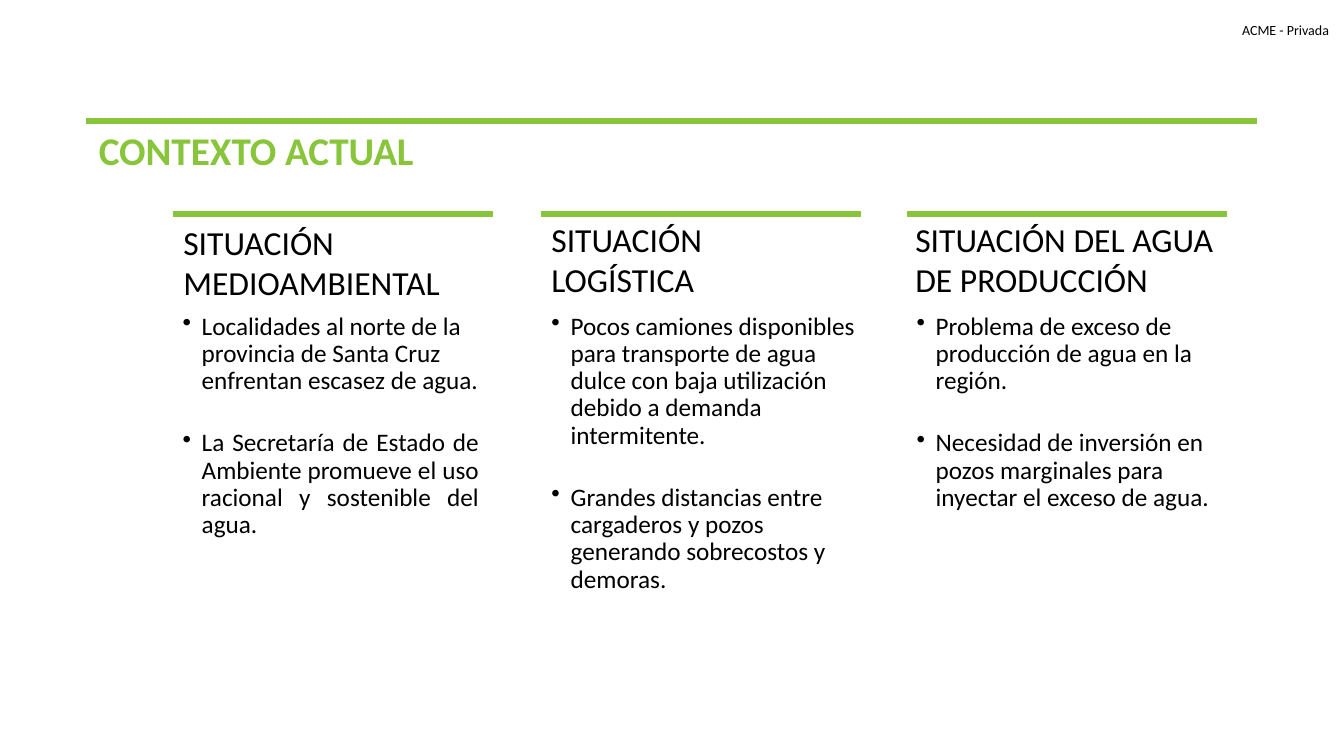
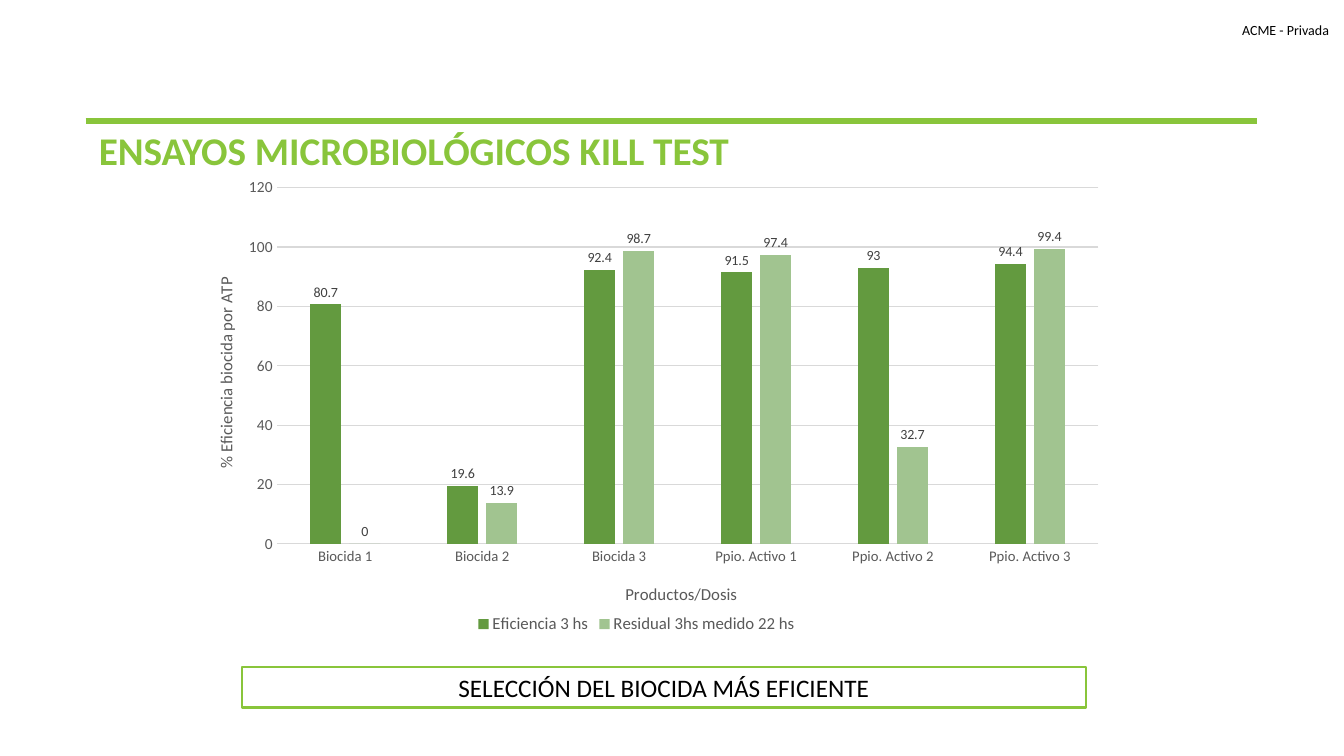
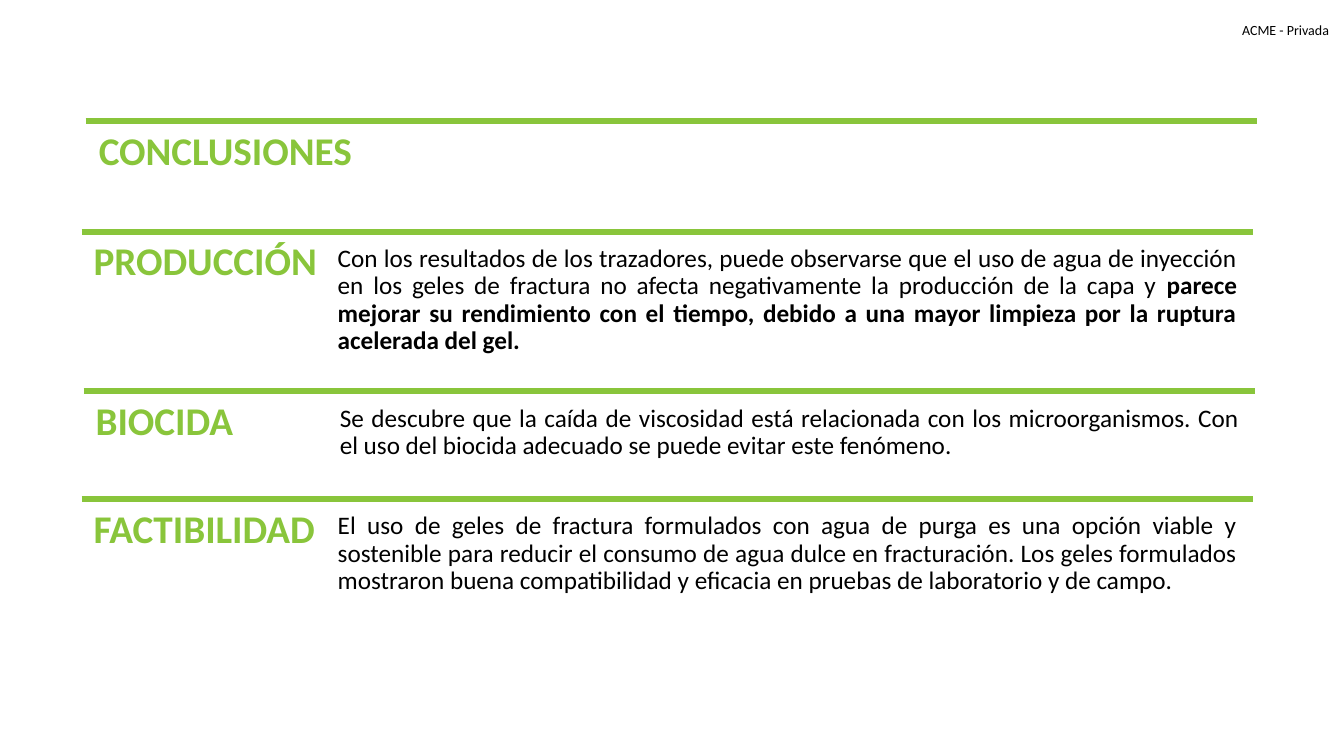
from lxml import etree
from pptx import Presentation
from pptx.chart import data as chart_data
from pptx.dml.color import RGBColor
from pptx.enum import chart as chart_enum, shapes, text
from pptx.oxml import ns
from pptx.util import Inches, Pt

FONT = "Calibri"
GREEN = RGBColor(0x89, 0xC5, 0x3B)
DARK_GREEN = RGBColor(0x63, 0x9A, 0x3F)
PALE_GREEN = RGBColor(0xA1, 0xC4, 0x90)
BLACK = RGBColor(0, 0, 0)
DARK_GRAY = RGBColor(0x40, 0x40, 0x40)
GRAY = RGBColor(0x59, 0x59, 0x59)
LIGHT_GRAY = RGBColor(0xD9, 0xD9, 0xD9)
LEFT, CENTER, JUSTIFY = text.PP_ALIGN.LEFT, text.PP_ALIGN.CENTER, text.PP_ALIGN.JUSTIFY

# Content
LABEL = "ACME - Privada"
RULE_LEFT, RULE_TOP, RULE_WIDTH = 0.85, 1.2, 11.62

# Rule left, heading (left, top, width, text), body (left, width), bullets with alignment
COLUMNS = [
    (1.72, (1.72, 2.15, 2.77, "SITUACIÓN MEDIOAMBIENTAL"), (1.72, 3.15), [
        ("Localidades al norte de la provincia de Santa Cruz enfrentan escasez de agua.", LEFT),
        ("La Secretaría de Estado de Ambiente promueve el uso racional y sostenible del agua.",
         JUSTIFY)]),
    (5.37, (5.37, 2.12, 2.77, "SITUACIÓN LOGÍSTICA"), (5.38, 3.24), [
        ("Pocos camiones disponibles para transporte de agua dulce con baja utilización "
         "debido a demanda intermitente.", LEFT),
        ("Grandes distancias entre cargaderos y pozos generando sobrecostos y demoras.", LEFT)]),
    (9, (8.98, 2.12, 3.43, "SITUACIÓN DEL AGUA DE PRODUCCIÓN"), (9, 3.15), [
        ("Problema de exceso de producción de agua en la región.", LEFT),
        ("Necesidad de inversión en pozos marginales para inyectar el exceso de agua.", LEFT)]),
]

PRODUCTS = ["Biocida 1", "Biocida 2", "Biocida 3",
            "Ppio. Activo 1", "Ppio. Activo 2", "Ppio. Activo 3"]
SERIES = [
    ("Eficiencia 3 hs", (80.7, 19.6, 92.4, 91.5, 93, 94.4), DARK_GREEN),
    ("Residual 3hs medido 22 hs", (0, 13.9, 98.7, 97.4, 32.7, 99.4), PALE_GREEN),
]

# Rule left, rule top, label, body runs (text, bold)
CONCLUSIONS = [
    (0.81, 2.3, "PRODUCCIÓN", [
        ("Con los resultados de los trazadores, puede observarse que el uso de agua de "
         "inyección en los geles de fractura no afecta negativamente la producción de la "
         "capa y ", False),
        ("parece mejorar su rendimiento con el tiempo, debido a una mayor limpieza por la "
         "ruptura acelerada del gel.", True)]),
    (0.83, 3.88, "BIOCIDA", [
        ("Se descubre que la caída de viscosidad está relacionada con los microorganismos. "
         "Con el uso del biocida adecuado se puede evitar este fenómeno.", False)]),
    (0.81, 4.95, "FACTIBILIDAD", [
        ("El uso de geles de fractura formulados con agua de purga es una opción viable y "
         "sostenible para reducir el consumo de agua dulce en fracturación. Los geles "
         "formulados mostraron buena compatibilidad y eficacia en pruebas de laboratorio y "
         "de campo.", False)]),
]


# Shared helpers
def style_font(font, size, color, bold=False):
    font.name, font.size, font.bold = FONT, Pt(size), bold
    font.color.rgb = color


def add_run(paragraph, words, size, color=BLACK, bold=False):
    run = paragraph.add_run()
    run.text = words
    style_font(run.font, size, color, bold)


def prepare_frame(shape, insets=(0.1, 0.05, 0.1, 0.05)):
    frame = shape.text_frame
    frame.word_wrap = True
    frame.auto_size = text.MSO_AUTO_SIZE.NONE
    frame.vertical_anchor = text.MSO_ANCHOR.TOP
    (frame.margin_left, frame.margin_top,
     frame.margin_right, frame.margin_bottom) = map(Inches, insets)
    return frame


def add_box(slide, left, top, width, height, **options):
    box = slide.shapes.add_textbox(*map(Inches, (left, top, width, height)))
    return prepare_frame(box, **options)


def add_rule(slide, left, top, width):
    rule = slide.shapes.add_connector(
        shapes.MSO_CONNECTOR.STRAIGHT,
        Inches(left), Inches(top), Inches(left + width), Inches(top))
    rule.line.color.rgb = GREEN
    rule.line.width = Pt(4.5)
    etree.SubElement(rule._element.spPr, ns.qn("a:effectLst"))


def add_bullet(paragraph):
    properties = paragraph._p.get_or_add_pPr()
    properties.set("marL", str(Inches(0.19)))
    properties.set("indent", str(-Inches(0.19)))
    etree.SubElement(properties, ns.qn("a:buChar")).set("char", "•")


def start_slide(presentation, title):
    """Title-only slide with the privacy label, the top rule and the title."""
    slide = presentation.slides.add_slide(presentation.slide_layouts[5])
    label = add_box(slide, 12.32, 0.21, 0.9, 0.17, insets=(0, 0, 0, 0))
    label.word_wrap = False
    add_run(label.paragraphs[0], LABEL, 10)
    holder = slide.shapes.title
    holder.left, holder.top = Inches(RULE_LEFT + 0.03), Inches(RULE_TOP)
    holder.width, holder.height = Inches(11.41), Inches(0.57)
    paragraph = prepare_frame(holder).paragraphs[0]
    paragraph.alignment = LEFT
    add_run(paragraph, title, 28, GREEN, True)
    add_rule(slide, RULE_LEFT, RULE_TOP, RULE_WIDTH)
    return slide


# Chart helpers
def place_part(chart, query, **fractions):
    """Fix a chart part at fractions of the chart's size."""
    part = chart._chartSpace.xpath(query)[0]
    layout = part.find(ns.qn("c:layout"))
    if layout is None:
        layout = etree.Element(ns.qn("c:layout"))
        part.insert(0, layout)
    manual = etree.SubElement(layout, ns.qn("c:manualLayout"))
    settings = {"xMode": "edge", "yMode": "edge", **fractions}
    if "w" in fractions:
        settings = {"layoutTarget": "inner", **settings}
    for name, value in settings.items():
        etree.SubElement(manual, ns.qn("c:" + name)).set("val", str(value))


def style_axis(axis, title, size):
    axis.major_tick_mark = axis.minor_tick_mark = chart_enum.XL_TICK_MARK.NONE
    style_font(axis.tick_labels.font, size, GRAY)
    add_run(axis.axis_title.text_frame.paragraphs[0], title, 12, GRAY)


def add_efficiency_chart(slide):
    data = chart_data.CategoryChartData()
    data.categories = PRODUCTS
    for name, values, _ in SERIES:
        data.add_series(name, values)
    chart = slide.shapes.add_chart(
        chart_enum.XL_CHART_TYPE.COLUMN_CLUSTERED,
        *map(Inches, (1.82, 1.66, 9.26, 5.05)), data).chart
    style_font(chart.font, 10, BLACK)
    chart.has_title = False

    plot = chart.plots[0]
    plot.vary_by_categories = False
    plot.gap_width, plot.overlap = 219, -27
    for series, (_, _, color) in zip(plot.series, SERIES):
        series.format.fill.solid()
        series.format.fill.fore_color.rgb = color
        labels = series.data_labels
        labels.show_value = True
        labels.position = chart_enum.XL_LABEL_POSITION.OUTSIDE_END
        style_font(labels.font, 10, DARK_GRAY)

    style_axis(chart.category_axis, "Productos/Dosis", 10.5)
    chart.category_axis.format.line.color.rgb = LIGHT_GRAY
    chart.category_axis.format.line.width = Pt(0.75)
    value_axis = chart.value_axis
    style_axis(value_axis, "% Eficiencia biocida por ATP", 11)
    value_axis.minimum_scale, value_axis.maximum_scale, value_axis.major_unit = 0, 120, 20
    value_axis.format.line.fill.background()
    value_axis.major_gridlines.format.line.color.rgb = LIGHT_GRAY
    value_axis.major_gridlines.format.line.width = Pt(0.75)

    chart.has_legend = True
    chart.legend.position = chart_enum.XL_LEGEND_POSITION.BOTTOM
    chart.legend.include_in_layout = False
    style_font(chart.legend.font, 12, GRAY)

    place_part(chart, "//c:plotArea", x=0.1, y=0.04, w=0.88, h=0.7)
    place_part(chart, "//c:catAx/c:title", x=0.47, y=0.81)
    place_part(chart, "//c:valAx/c:title", x=0.03, y=0.21)
    place_part(chart, "//c:legend", x=0.31, y=0.87)


# Slides
def build_context(presentation):
    slide = start_slide(presentation, "CONTEXTO ACTUAL")
    for rule_left, heading, (body_left, body_width), bullets in COLUMNS:
        add_rule(slide, rule_left, 2.12, 3.17)
        left, top, width, words = heading
        add_run(add_box(slide, left, top, width, 0.91).paragraphs[0], words, 24)
        body = add_box(slide, body_left, 3.02, body_width, 3.54,
                       insets=(0.09, 0.09, 0.12, 0.14))
        for index, (words, alignment) in enumerate(bullets):
            paragraph = body.add_paragraph() if index else body.paragraphs[0]
            add_bullet(paragraph)
            paragraph.alignment = alignment
            paragraph.line_spacing = 0.9
            if index:
                paragraph.space_before = Pt(25)
            add_run(paragraph, words, 18)


def build_kill_test(presentation):
    slide = start_slide(presentation, "ENSAYOS MICROBIOLÓGICOS KILL TEST")
    add_efficiency_chart(slide)
    banner = slide.shapes.add_shape(
        shapes.MSO_SHAPE.RECTANGLE, *map(Inches, (2.4, 6.62, 8.37, 0.4)))
    banner.shadow.inherit = False
    banner.fill.background()
    banner.line.color.rgb = GREEN
    banner.line.width = Pt(1.5)
    paragraph = prepare_frame(banner).paragraphs[0]
    paragraph.alignment = CENTER
    add_run(paragraph, "SELECCIÓN DEL BIOCIDA MÁS EFICIENTE", 18)


def build_conclusions(presentation):
    slide = start_slide(presentation, "CONCLUSIONES")
    for left, top, label, runs in CONCLUSIONS:
        add_rule(slide, left, top, RULE_WIDTH)
        label_box = add_box(slide, left + 0.02, top, 2.57, 0.57)
        add_run(label_box.paragraphs[0], label, 28, GREEN, True)
        body = add_box(slide, left + 2.26, top + 0.11, 9.36, 1.71,
                       insets=(0.28, 0.03, 0.16, 0.03))
        paragraph = body.paragraphs[0]
        paragraph.alignment = JUSTIFY
        paragraph.line_spacing = 0.9
        for words, bold in runs:
            add_run(paragraph, words, 18, bold=bold)


def main():
    presentation = Presentation()
    presentation.slide_width, presentation.slide_height = Inches(13.33), Inches(7.5)
    build_context(presentation)
    build_kill_test(presentation)
    build_conclusions(presentation)
    presentation.save("out.pptx")


if __name__ == "__main__":
    main()
